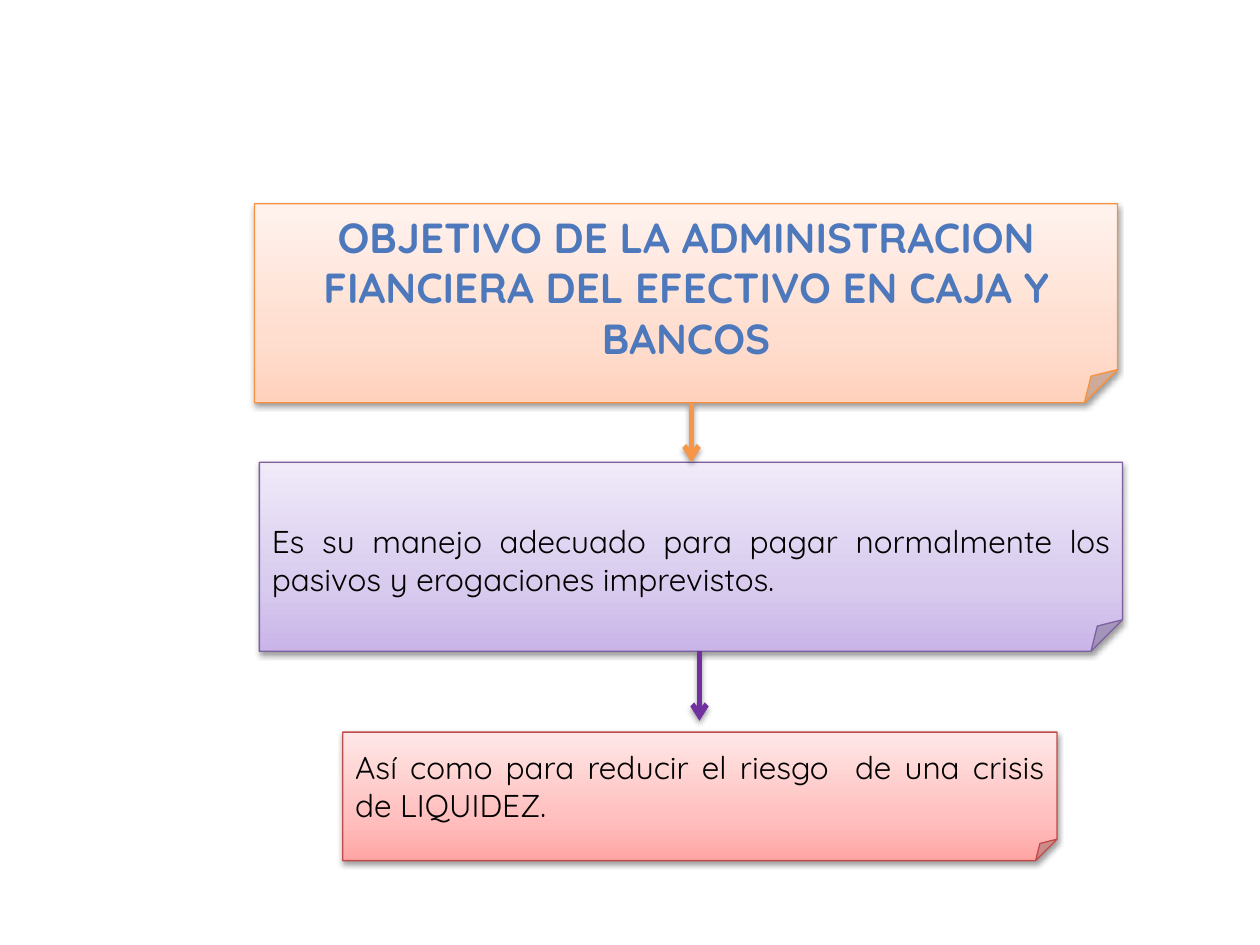
from dataclasses import dataclass

import pptx
import pptx.dml.color
import pptx.enum.shapes
import pptx.enum.text
import pptx.oxml
import pptx.oxml.ns
import pptx.util

Cm = pptx.util.Cm
Pt = pptx.util.Pt
Align = pptx.enum.text.PP_ALIGN
FONT = "Quicksand"
NS = pptx.oxml.ns.nsdecls("a")
COLORS = {
    "title": "4D79BC",
    "text": "000000",
    "shadow": "000000",
    "orange_line": "F69240",
    "orange_arrow": "F79646",
    "purple_line": "7D60A0",
    "purple_arrow": "7030A0",
    "red_line": "BF4C48",
}
GRADIENTS = {
    "orange": ("FFD2BD", "FFDED0", "FFF2ED"),
    "purple": ("C9B5E8", "D8CBEE", "F0EAF9"),
    "red": ("FFA6A5", "FFC0BF", "FFE7E7"),
}
GRADIENT_STOPS = (0, 35, 100)


@dataclass
class Note:
    text: str
    left: float
    top: float
    width: float
    height: float
    hue: str
    size: int = 18
    color: str = "text"
    bold: bool = False
    align: Align = Align.JUSTIFY
    margin_top: float = 0.13


@dataclass
class Arrow:
    x: float
    top: float
    bottom: float
    color: str


NOTES = [
    Note("Es su manejo adecuado para pagar normalmente los pasivos y erogaciones imprevistos.",
         5.23, 9.32, 17.4, 3.81, "purple", margin_top=0.9),
    Note("Así como para reducir el riesgo  de una crisis de LIQUIDEZ.",
         6.91, 14.76, 14.4, 2.59, "red"),
    Note("OBJETIVO DE LA ADMINISTRACION FIANCIERA DEL EFECTIVO EN CAJA Y BANCOS",
         5.13, 4.11, 17.4, 4.01, "orange", 24, "title", True, Align.CENTER),
]
ARROWS = [
    Arrow(14.1, 13.13, 14.53, "purple_arrow"),
    Arrow(13.94, 8.13, 9.32, "orange_arrow"),
]


def rgb(name: str) -> pptx.dml.color.RGBColor:
    return pptx.dml.color.RGBColor.from_string(COLORS[name])


def add_shadow(shape, distance: float, opacity: int) -> None:
    """Drop a soft shadow straight down; distance in points, opacity in percent."""
    shape._element.spPr.append(pptx.oxml.parse_xml(
        f'<a:effectLst {NS}><a:outerShdw blurRad="{Pt(3.1)}" dist="{Pt(distance)}" '
        f'dir="5400000" rotWithShape="0"><a:srgbClr val="{COLORS["shadow"]}">'
        f'<a:alpha val="{opacity * 1000}"/></a:srgbClr></a:outerShdw></a:effectLst>'))


def fill_gradient(shape, hue: str) -> None:
    """Fill from the bottom edge up with the three stops of a hue."""
    stops = "".join(
        f'<a:gs pos="{pos * 1000}"><a:srgbClr val="{color}"/></a:gs>'
        for pos, color in zip(GRADIENT_STOPS, GRADIENTS[hue]))
    geometry = shape._element.spPr.find(pptx.oxml.ns.qn("a:prstGeom"))
    geometry.addnext(pptx.oxml.parse_xml(
        f'<a:gradFill {NS} rotWithShape="1"><a:gsLst>{stops}</a:gsLst>'
        '<a:lin ang="16200000" scaled="0"/></a:gradFill>'))


def add_note(s, note: Note) -> None:
    sp = s.shapes.add_shape(
        pptx.enum.shapes.MSO_SHAPE.FOLDED_CORNER,
        Cm(note.left), Cm(note.top), Cm(note.width), Cm(note.height))
    fill_gradient(sp, note.hue)
    sp.line.color.rgb = rgb(f"{note.hue}_line")
    sp.line.width = Pt(0.75)
    add_shadow(sp, 1.6, 38)
    tf = sp.text_frame
    tf.word_wrap = True
    tf.vertical_anchor = pptx.enum.text.MSO_ANCHOR.MIDDLE
    tf.margin_top = Cm(note.margin_top)
    tf.text = note.text
    p = tf.paragraphs[0]
    p.alignment = note.align
    r = p.runs[0]
    r.font.name = FONT
    r.font.size = Pt(note.size)
    r.font.bold = note.bold
    r.font.color.rgb = rgb(note.color)


def add_arrow(s, arrow: Arrow) -> None:
    line = s.shapes.add_connector(
        pptx.enum.shapes.MSO_CONNECTOR.STRAIGHT,
        Cm(arrow.x), Cm(arrow.top), Cm(arrow.x), Cm(arrow.bottom))
    line.line.color.rgb = rgb(arrow.color)
    line.line.width = Pt(3)
    line.get_or_add_ln().append(pptx.oxml.parse_xml(f'<a:tailEnd {NS} type="arrow"/>'))
    add_shadow(line, 1.8, 35)


def main() -> None:
    prs = pptx.Presentation()
    prs.slide_width, prs.slide_height = Cm(25.4), Cm(19.05)
    s = prs.slides.add_slide(prs.slide_layouts[6])
    for note in NOTES:
        add_note(s, note)
    for arrow in ARROWS:
        add_arrow(s, arrow)
    prs.save("out.pptx")


if __name__ == "__main__":
    main()
